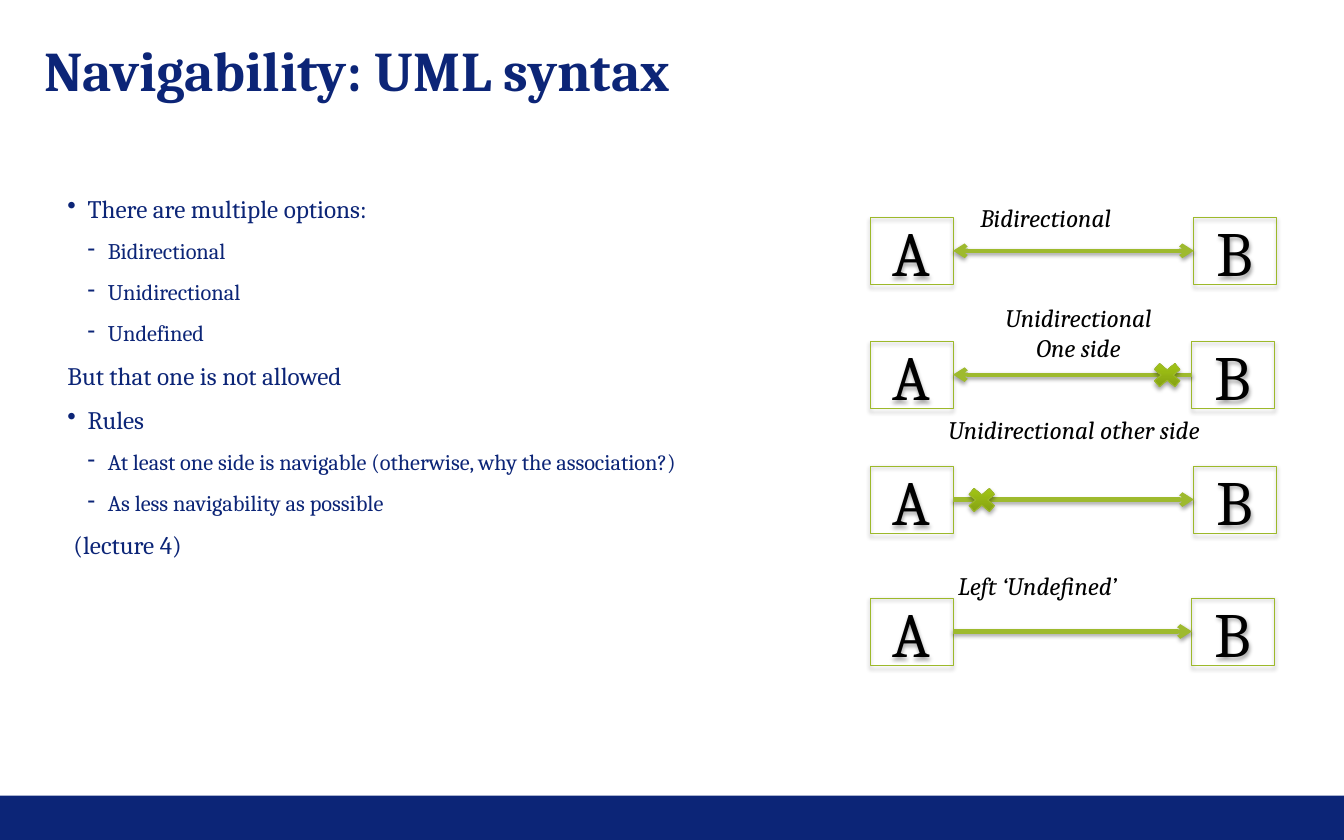
from pptx import Presentation
from pptx.dml.color import RGBColor
from pptx.enum.shapes import MSO_CONNECTOR, MSO_SHAPE
from pptx.enum.text import MSO_ANCHOR, MSO_AUTO_SIZE, PP_ALIGN
from pptx.oxml.ns import qn
from pptx.util import Pt
from lxml import etree

RECTANGLE = MSO_SHAPE.RECTANGLE
CROSS = MSO_SHAPE.MATH_MULTIPLY
STRAIGHT = MSO_CONNECTOR.STRAIGHT
MIDDLE, TOP = MSO_ANCHOR.MIDDLE, MSO_ANCHOR.TOP
LEFT, CENTER = PP_ALIGN.LEFT, PP_ALIGN.CENTER

TITLE = "Navigability: UML syntax"
BODY = [
    ("topic", "There are multiple options:"),
    ("item", "Bidirectional"),
    ("item", "Unidirectional"),
    ("item", "Undefined"),
    ("plain", "But that one is not allowed"),
    ("topic", "Rules"),
    ("item", "At least one side is navigable (otherwise, why the association?)"),
    ("item", "As less navigability as possible"),
    ("aside", "(lecture 4)"),
]
ASSOCIATIONS = [
    {"top": 216, "b_left": 1185, "heads": ("headEnd", "tailEnd"), "cross_left": None,
     "label": ["Bidirectional"], "label_box": (961, 195, 179, 43), "align": LEFT},
    {"top": 339, "b_left": 1183, "heads": ("headEnd",), "cross_left": 1139,
     "label": ["Unidirectional", "One side"], "label_box": (972, 294, 197, 73), "align": CENTER},
    {"top": 463, "b_left": 1185, "heads": ("tailEnd",), "cross_left": 955,
     "label": ["Unidirectional other side"], "label_box": (909, 405, 314, 43), "align": CENTER},
    {"top": 594, "b_left": 1183, "heads": ("tailEnd",), "cross_left": None,
     "label": ["Left ‘Undefined’"], "label_box": (939, 560, 210, 43), "align": LEFT},
]

THEME = {
    "font": "Cambria",
    "navy": "0C2577", "black": "000000", "outline": "9DB92A", "arrow": "9EBA2E",
    "cross_dark": "7F9A13", "cross_light": "A8CD15",
    "title_size": 40, "body_size": 18, "item_size": 16, "class_size": 45, "label_size": 18,
    "outline_width": 0.75, "arrow_width": 3,
    "shape_shadow": {"alpha": 35, "blur": 3.1, "distance": 1.8},
    "arrow_shadow": {"alpha": 38, "blur": 3.1, "distance": 1.6},
}
LEVELS = {
    "topic": {"bullet": "•", "margin": 20, "indent": -20, "size": "body_size"},
    "item": {"bullet": "-", "margin": 40, "indent": -20, "size": "item_size"},
    "plain": {"bullet": None, "margin": 0, "indent": 0, "size": "body_size"},
    "aside": {"bullet": None, "margin": 6, "indent": 0, "size": "body_size"},
}
EMU_PER_PX = 9144
SLIDE_WIDTH, SLIDE_HEIGHT = 1334, 834
FOOTER_HEIGHT = 44
A_LEFT, CLASS_WIDTH, CLASS_HEIGHT = 864, 82, 67
CROSS_WIDTH, CROSS_HEIGHT = 39, 33


def px(*lengths):
    return [length * EMU_PER_PX for length in lengths]


def color(name):
    return RGBColor.from_string(THEME[name])


def set_all(target, values):
    for name, value in values.items():
        setattr(target, name, value)


def add_run(paragraph, text, size, color_name, **style):
    run = paragraph.add_run()
    run.text = text
    set_all(run.font, {"name": THEME["font"], "size": Pt(THEME[size]), **style})
    run.font.color.rgb = color(color_name)


def format_frame(frame, anchor, horizontal=0, vertical=0, wrap=True):
    side, edge = px(horizontal, vertical)
    set_all(frame, {"word_wrap": wrap, "vertical_anchor": anchor,
                    "margin_left": side, "margin_right": side,
                    "margin_top": edge, "margin_bottom": edge})
    return frame


def add_shadow(shape, shadow):
    properties = shape._element.spPr
    effects = properties.find(qn("a:effectLst"))
    if effects is None:
        effects = etree.SubElement(properties, qn("a:effectLst"))
    outer = etree.SubElement(effects, qn("a:outerShdw"), {
        "blurRad": str(Pt(shadow["blur"])), "dist": str(Pt(shadow["distance"])),
        "dir": "5400000", "rotWithShape": "0"})
    tint = etree.SubElement(outer, qn("a:srgbClr"), val=THEME["black"])
    etree.SubElement(tint, qn("a:alpha"), val=str(shadow["alpha"] * 1000))


def add_outlined(slide, kind, box):
    shape = slide.shapes.add_shape(kind, *px(*box))
    shape.shadow.inherit = False
    shape.line.color.rgb = color("outline")
    shape.line.width = Pt(THEME["outline_width"])
    add_shadow(shape, THEME["shape_shadow"])
    return shape


def add_class(slide, name, left, top):
    shape = add_outlined(slide, RECTANGLE, (left, top, CLASS_WIDTH, CLASS_HEIGHT))
    shape.fill.background()
    paragraph = format_frame(shape.text_frame, MIDDLE, 12, 6).paragraphs[0]
    paragraph.alignment = CENTER
    add_run(paragraph, name, "class_size", "black")


def add_arrow(slide, start, end, y, heads):
    connector = slide.shapes.add_connector(STRAIGHT, *px(start, y, end, y))
    connector.line.color.rgb = color("arrow")
    connector.line.width = Pt(THEME["arrow_width"])
    for head in heads:
        etree.SubElement(connector.line._get_or_add_ln(), qn("a:" + head), type="arrow")
    add_shadow(connector, THEME["arrow_shadow"])


def add_cross(slide, left, center_y):
    top = center_y - CROSS_HEIGHT // 2
    cross = add_outlined(slide, CROSS, (left, top, CROSS_WIDTH, CROSS_HEIGHT))
    cross.fill.gradient()
    cross.fill.gradient_angle = 90
    for stop, name in zip(cross.fill.gradient_stops, ("cross_dark", "cross_light")):
        stop.color.rgb = color(name)


def add_label(slide, association):
    label = slide.shapes.add_textbox(*px(*association["label_box"]))
    frame = format_frame(label.text_frame, TOP, 12, 6, wrap=False)
    frame.auto_size = MSO_AUTO_SIZE.SHAPE_TO_FIT_TEXT
    for index, line in enumerate(association["label"]):
        paragraph = frame.add_paragraph() if index else frame.paragraphs[0]
        paragraph.alignment = association["align"]
        add_run(paragraph, line, "label_size", "black", italic=True)


def add_association(slide, association):
    top, b_left = association["top"], association["b_left"]
    center_y = top + CLASS_HEIGHT // 2
    add_class(slide, "A", A_LEFT, top)
    add_class(slide, "B", b_left, top)
    add_arrow(slide, A_LEFT + CLASS_WIDTH, b_left, center_y, association["heads"])
    if association["cross_left"] is not None:
        add_cross(slide, association["cross_left"], center_y)
    add_label(slide, association)


def add_body(slide):
    body = slide.shapes.add_textbox(*px(67, 195, 703, 550))
    frame = format_frame(body.text_frame, TOP)
    for index, (kind, text) in enumerate(BODY):
        level = LEVELS[kind]
        paragraph = frame.add_paragraph() if index else frame.paragraphs[0]
        set_all(paragraph, {"line_spacing": 0.9, "space_after": Pt(6),
                            "space_before": Pt(6 if index else 0)})
        properties = paragraph._p.get_or_add_pPr()
        margin, indent = px(level["margin"], level["indent"])
        properties.set("marL", str(margin))
        properties.set("indent", str(indent))
        if level["bullet"]:
            bullet_color = etree.SubElement(properties, qn("a:buClr"))
            etree.SubElement(bullet_color, qn("a:srgbClr"), val=THEME["navy"])
            etree.SubElement(properties, qn("a:buChar"), char=level["bullet"])
        add_run(paragraph, text, level["size"], "navy")


def main():
    presentation = Presentation()
    presentation.slide_width, presentation.slide_height = px(SLIDE_WIDTH, SLIDE_HEIGHT)
    slide = presentation.slides.add_slide(presentation.slide_layouts[6])
    footer = slide.shapes.add_shape(
        RECTANGLE, *px(0, SLIDE_HEIGHT - FOOTER_HEIGHT, SLIDE_WIDTH, FOOTER_HEIGHT))
    footer.shadow.inherit = False
    footer.fill.solid()
    footer.fill.fore_color.rgb = color("navy")
    footer.line.fill.background()
    title = slide.shapes.add_textbox(*px(44, 44, 1246, 49))
    paragraph = format_frame(title.text_frame, MIDDLE).paragraphs[0]
    add_run(paragraph, TITLE, "title_size", "navy", bold=True)
    add_body(slide)
    for association in ASSOCIATIONS:
        add_association(slide, association)
    presentation.save("out.pptx")


if __name__ == "__main__":
    main()
